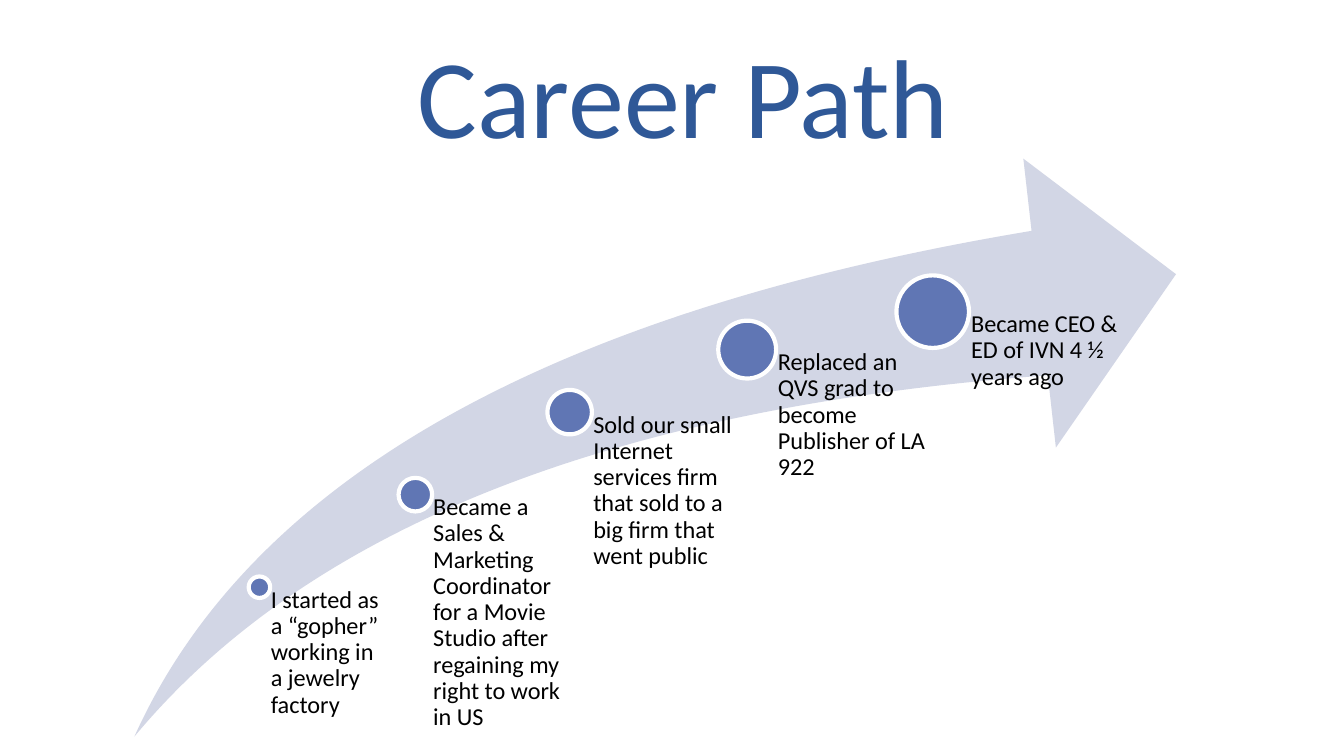
"""Build the Career Path slide: five milestones along a rising arrow."""
from pptx import Presentation
from pptx.dml.color import RGBColor
from pptx.enum import shapes, text
from pptx.util import Pt

TITLE = "Career Path"
MILESTONES = [
    ("I started as a “gopher” working in a jewelry factory", 139, 314.6, 11.5, 65),
    ("Became a Sales & Marketing Coordinator for a Movie Studio after "
     "regaining my right to work in US", 222.5, 265, 18, 82),
    ("Sold our small Internet services firm that sold to a big firm that "
     "went public", 305.2, 220.8, 23.8, 96),
    ("Replaced an QVS grad to become Publisher of LA 922", 400.3, 187.3, 31, 98.6),
    ("Became CEO & ED of IVN 4 ½ years ago", 499.7, 167, 38.9, 100),
]

FONT = "Calibri"
ARROW_COLOR = RGBColor(0xD2, 0xD6, 0xE5)
DOT_COLOR = RGBColor(0x60, 0x76, 0xB4)
WHITE = RGBColor(0xFF, 0xFF, 0xFF)
BLACK = RGBColor(0, 0, 0)
TITLE_COLOR = RGBColor(0x2F, 0x58, 0x97)

ARROW_LEFT, ARROW_TOP, ARROW_WIDTH, ARROW_HEIGHT = 72, 85, 558, 309.6
ARROW_BOTTOM = ARROW_TOP + ARROW_HEIGHT
INSET_RATIO = 0.53


def add_filled(slide, kind, left, top, width, height, color):
    shape = slide.shapes.add_shape(kind, Pt(left), Pt(top), Pt(width), Pt(height))
    shape.shadow.inherit = False
    shape.fill.solid()
    shape.fill.fore_color.rgb = color
    shape.line.fill.background()
    return shape


def add_text(slide, content, left, top, width, height, size, color):
    frame = slide.shapes.add_textbox(Pt(left), Pt(top), Pt(width), Pt(height)).text_frame
    frame.word_wrap = True
    paragraph = frame.paragraphs[0]
    paragraph.text = content
    paragraph.font.name = FONT
    paragraph.font.size = Pt(size)
    paragraph.font.color.rgb = color
    return frame, paragraph


def add_milestone(slide, content, center_x, center_y, diameter, width):
    dot = add_filled(slide, shapes.MSO_SHAPE.OVAL, center_x - diameter / 2,
                     center_y - diameter / 2, diameter, diameter, DOT_COLOR)
    dot.line.color.rgb = WHITE
    dot.line.width = Pt(2.25)
    frame, paragraph = add_text(slide, content, center_x, center_y, width,
                                ARROW_BOTTOM - center_y, 13, BLACK)
    frame.margin_left = Pt(diameter * INSET_RATIO)
    frame.margin_top = frame.margin_right = frame.margin_bottom = 0
    paragraph.line_spacing = 0.9


def main():
    presentation = Presentation()
    presentation.slide_width, presentation.slide_height = Pt(720), Pt(405)
    slide = presentation.slides.add_slide(presentation.slide_layouts[6])

    arrow = add_filled(slide, shapes.MSO_SHAPE.SWOOSH_ARROW, ARROW_LEFT, ARROW_TOP,
                       ARROW_WIDTH, ARROW_HEIGHT, ARROW_COLOR)
    arrow.adjustments[0] = arrow.adjustments[1] = 0.25
    for milestone in MILESTONES:
        add_milestone(slide, *milestone)

    frame, paragraph = add_text(slide, TITLE, 42, 22.3, 648, 67.7, 60, TITLE_COLOR)
    frame.vertical_anchor = text.MSO_ANCHOR.BOTTOM
    paragraph.alignment = text.PP_ALIGN.CENTER
    paragraph.line_spacing = Pt(58)

    presentation.save("out.pptx")


if __name__ == "__main__":
    main()
